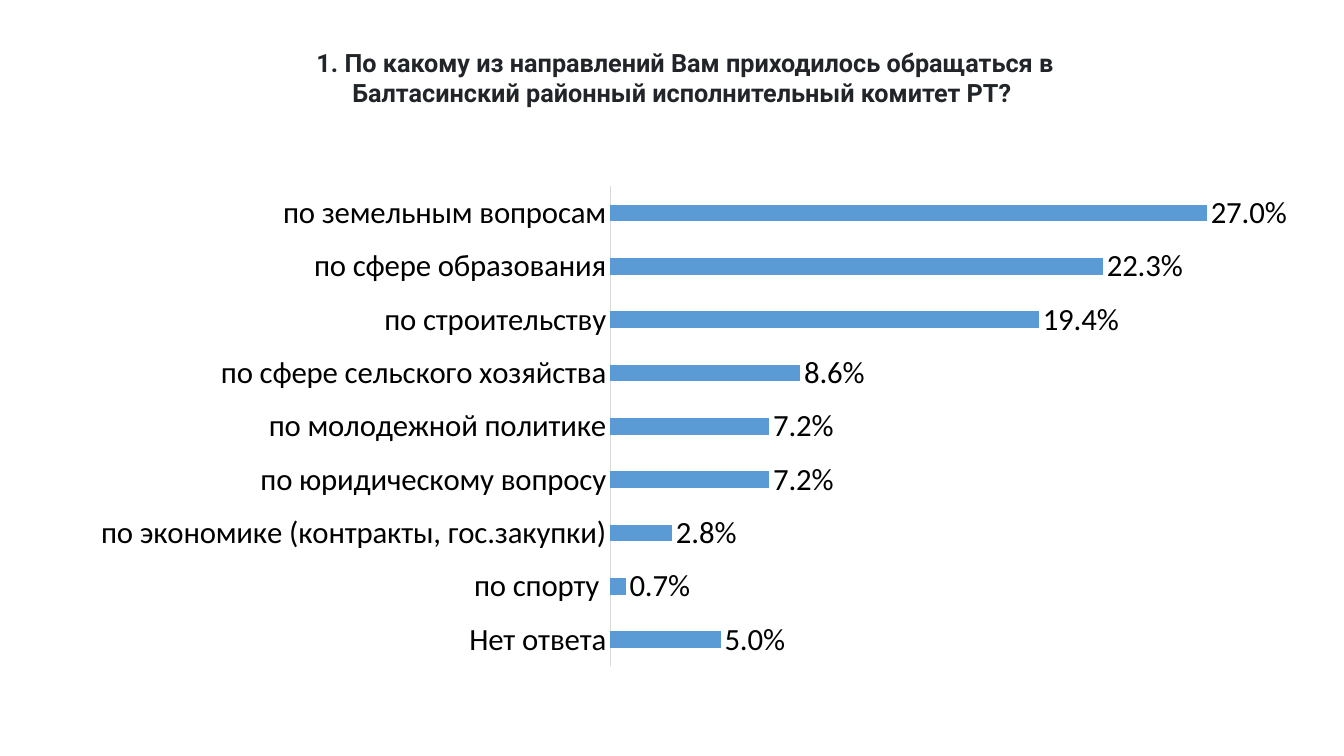
from pptx import Presentation
from pptx.chart.data import CategoryChartData
from pptx.dml.color import RGBColor
from pptx.enum.chart import XL_CHART_TYPE, XL_LABEL_POSITION, XL_TICK_MARK
from pptx.enum.text import MSO_AUTO_SIZE, PP_ALIGN
from pptx.util import Inches, Pt

BAR_CLUSTERED = XL_CHART_TYPE.BAR_CLUSTERED
OUTSIDE_END = XL_LABEL_POSITION.OUTSIDE_END
NO_TICKS = XL_TICK_MARK.NONE
FIT_SHAPE = MSO_AUTO_SIZE.SHAPE_TO_FIT_TEXT
CENTER = PP_ALIGN.CENTER

COLORS = {"title": "212529", "label": "000000", "bar": "5B9BD5", "axis": "D9D9D9"}
PERCENT = "0.0%"

ANSWERS = [
    ("Нет ответа", 0.05),
    ("по спорту ", 0.007),
    ("по экономике (контракты, гос.закупки)", 0.028),
    ("по юридическому вопросу", 0.072),
    ("по молодежной политике", 0.072),
    ("по сфере сельского хозяйства", 0.086),
    ("по строительству", 0.194),
    ("по сфере образования", 0.223),
    ("по земельным вопросам", 0.27),
]


def style_font(font, name, size, color, bold=False):
    font.name = name
    font.size = Pt(size)
    font.bold = bold
    font.color.rgb = RGBColor.from_string(COLORS[color])


def add_text(slide, text, left, top, width, height, align=CENTER, **font_format):
    shape = slide.shapes.add_textbox(Inches(left), Inches(top), Inches(width), Inches(height))
    frame = shape.text_frame
    frame.word_wrap = True
    frame.auto_size = FIT_SHAPE
    paragraph = frame.paragraphs[0]
    paragraph.alignment = align
    run = paragraph.add_run()
    run.text = text
    style_font(run.font, **font_format)


presentation = Presentation()
presentation.slide_width = Inches(13.33)
presentation.slide_height = Inches(7.5)
slide = presentation.slides.add_slide(presentation.slide_layouts[6])

add_text(
    slide,
    "1. По какому из направлений Вам приходилось обращаться в "
    "Балтасинский районный исполнительный комитет РТ? ",
    left=2.93, top=0.42, width=7.73, height=0.71,
    name="Roboto", size=18, color="title", bold=True,
)

chart_data = CategoryChartData(number_format=PERCENT)
chart_data.categories = [answer for answer, share in ANSWERS]
chart_data.add_series("Series 1", [share for answer, share in ANSWERS])
chart = slide.shapes.add_chart(
    BAR_CLUSTERED, Inches(0.76), Inches(1.75), Inches(12.11), Inches(4.96), chart_data
).chart
chart.has_title = False
chart.has_legend = False
style_font(chart.font, "Calibri", 22, "label")

category_axis = chart.category_axis
category_axis.major_tick_mark = NO_TICKS
category_axis.minor_tick_mark = NO_TICKS
category_axis.has_major_gridlines = False
category_axis.format.line.color.rgb = RGBColor.from_string(COLORS["axis"])
category_axis.format.line.width = Pt(0.75)
style_font(category_axis.tick_labels.font, "Calibri", 22, "label")

value_axis = chart.value_axis
value_axis.visible = False
value_axis.has_major_gridlines = False
value_axis.minimum_scale = 0
value_axis.maximum_scale = 0.3
value_axis.tick_labels.number_format = PERCENT
value_axis.tick_labels.number_format_is_linked = False

plot = chart.plots[0]
plot.gap_width = 219
plot.vary_by_categories = False
bars = plot.series[0]
bars.format.fill.solid()
bars.format.fill.fore_color.rgb = RGBColor.from_string(COLORS["bar"])

labels = bars.data_labels
labels.show_value = True
labels.position = OUTSIDE_END
labels.number_format = PERCENT
labels.number_format_is_linked = False
style_font(labels.font, "Calibri", 22, "label")

presentation.save("out.pptx")
